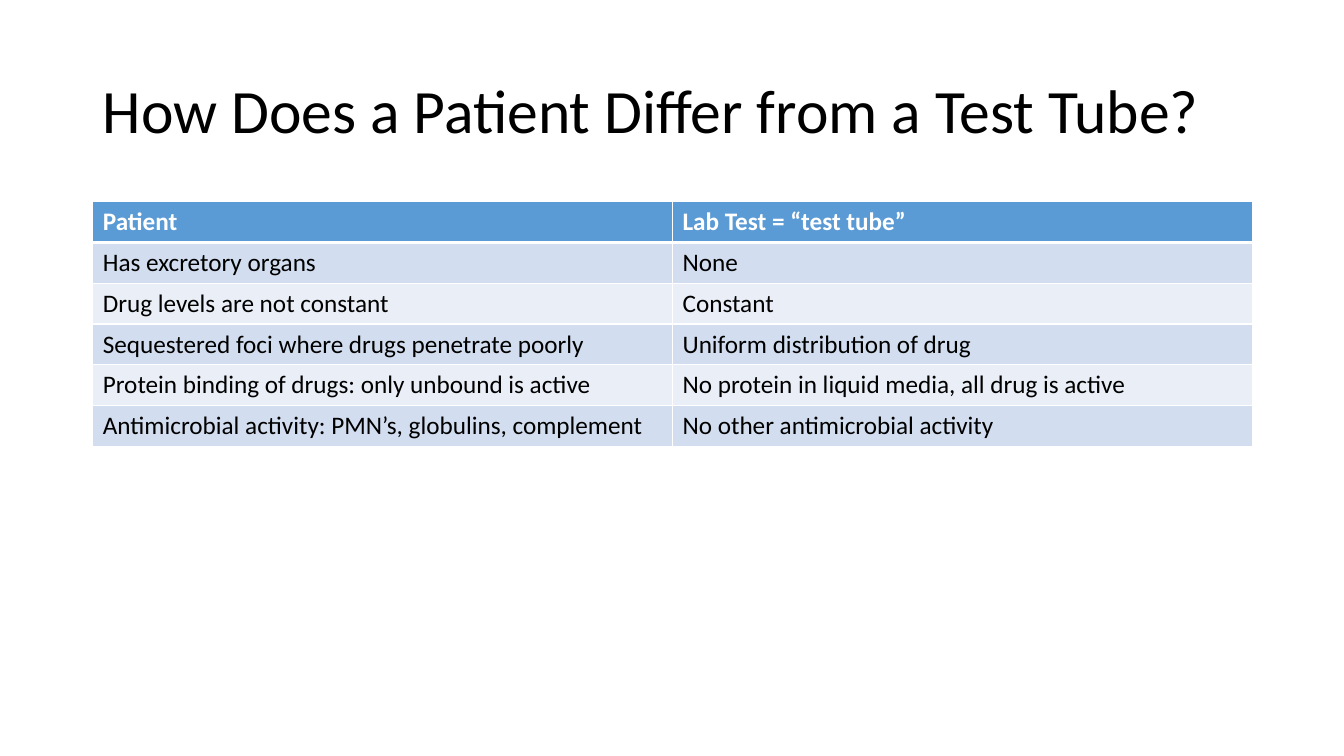
from lxml.etree import SubElement
from pptx import Presentation
from pptx.dml.color import RGBColor
from pptx.enum.text import MSO_ANCHOR
from pptx.oxml.ns import qn
from pptx.util import Inches, Pt

ROWS = [
    ("Patient", "Lab Test = “test tube”"),
    ("Has excretory organs", "None"),
    ("Drug levels are not constant", "Constant"),
    ("Sequestered foci where drugs penetrate poorly", "Uniform distribution of drug"),
    ("Protein binding of drugs: only unbound is active",
     "No protein in liquid media, all drug is active"),
    ("Antimicrobial activity: PMN’s, globulins, complement",
     "No other antimicrobial activity"),
]
HEADER_FILL = "5B9BD5"
BAND_FILLS = ("EAEFF7", "D2DEEF")
BLACK, WHITE = "000000", "FFFFFF"
LEFT, WIDTH, ROW_HEIGHT = 0.92, 11.5, 0.405


def rgb(value):
    return RGBColor.from_string(value)


def set_text(tf, text, size, color, bold=False):
    p = tf.paragraphs[0]
    p.text = text
    font = p.runs[0].font
    font.name = "Calibri"
    font.size = Pt(size)
    font.bold = bold
    font.color.rgb = rgb(color)
    return p


def add_title(s, text):
    tf = s.shapes.add_textbox(Inches(LEFT), Inches(0.4), Inches(WIDTH), Inches(1.45)).text_frame
    tf.word_wrap = True
    tf.vertical_anchor = MSO_ANCHOR.MIDDLE
    set_text(tf, text, 44, BLACK).line_spacing = 0.9


def set_borders(cell, top, bottom):
    tcPr = cell._tc.get_or_add_tcPr()
    for side, width in (("L", 1), ("R", 1), ("T", top), ("B", bottom)):
        ln = SubElement(tcPr, qn(f"a:ln{side}"), w=str(Pt(width)))
        fill = SubElement(ln, qn("a:solidFill"))
        SubElement(fill, qn("a:srgbClr"), val=WHITE)


def add_comparison(s, rows):
    table = s.shapes.add_table(len(rows), len(rows[0]), Inches(LEFT), Inches(2),
                               Inches(WIDTH), Inches(ROW_HEIGHT * len(rows))).table
    for i, row in enumerate(rows):
        table.rows[i].height = Inches(ROW_HEIGHT)
        header = i == 0
        for j, text in enumerate(row):
            cell = table.cell(i, j)
            set_text(cell.text_frame, text, 18, WHITE if header else BLACK, header)
            set_borders(cell, 3 if i == 1 else 1, 3 if header else 1)
            cell.fill.solid()
            cell.fill.fore_color.rgb = rgb(HEADER_FILL if header else BAND_FILLS[i % 2])


def main():
    prs = Presentation()
    prs.slide_width = Inches(13.33)
    prs.slide_height = Inches(7.5)
    s = prs.slides.add_slide(prs.slide_layouts[6])
    add_title(s, "How Does a Patient Differ from a Test Tube?")
    add_comparison(s, ROWS)
    prs.save("out.pptx")


if __name__ == "__main__":
    main()
